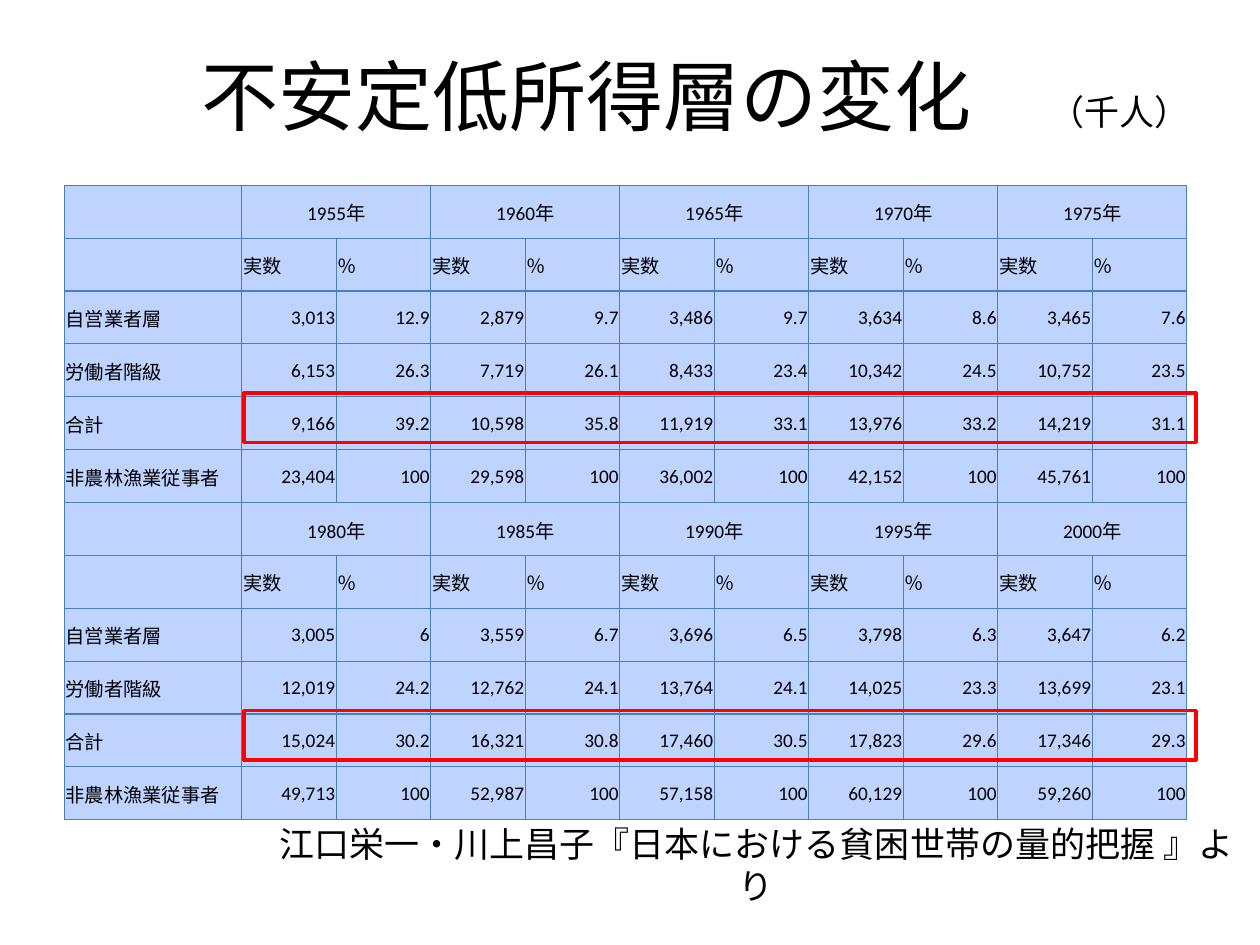
from dataclasses import dataclass

from lxml import etree
from pptx import Presentation
from pptx import util as u
from pptx.dml.color import RGBColor
from pptx.enum import shapes, text
from pptx.oxml import ns


@dataclass(frozen=True)
class Theme:
    """Colours, type and line sizes of the slide."""
    font: str = "Calibri"
    ink: str = "000000"
    cell: str = "BFD3FF"
    rule: str = "4B7EBC"
    mark: str = "FF0000"
    head: float = 44
    note: float = 20
    body: float = 11
    thin: float = 0.75
    bold: float = 2


THEME = Theme()
ALIGN = text.PP_ALIGN
LABELS = ["自営業者層", "労働者階級", "合計", "非農林漁業従事者"]
BLOCKS = [
    ([1955, 1960, 1965, 1970, 1975], [
        "3,013 12.9 2,879 9.7 3,486 9.7 3,634 8.6 3,465 7.6",
        "6,153 26.3 7,719 26.1 8,433 23.4 10,342 24.5 10,752 23.5",
        "9,166 39.2 10,598 35.8 11,919 33.1 13,976 33.2 14,219 31.1",
        "23,404 100 29,598 100 36,002 100 42,152 100 45,761 100"]),
    ([1980, 1985, 1990, 1995, 2000], [
        "3,005 6 3,559 6.7 3,696 6.5 3,798 6.3 3,647 6.2",
        "12,019 24.2 12,762 24.1 13,764 24.1 14,025 23.3 13,699 23.1",
        "15,024 30.2 16,321 30.8 17,460 30.5 17,823 29.6 17,346 29.3",
        "49,713 100 52,987 100 57,158 100 60,129 100 59,260 100"]),
]
STEP = len(LABELS) + 2
ROWS = STEP * len(BLOCKS)
COLS = 11
LEAD = 1.88


def share(deck, left, top, width, height):
    """Turn percentages of the slide into a box of lengths."""
    wide, high = deck.slide_width / 100, deck.slide_height / 100
    return [round(n) for n in (left * wide, top * high, width * wide, height * high)]


def style(para, size, align=ALIGN.LEFT):
    """Set the type and alignment of a paragraph."""
    para.alignment = align
    para.font.size = u.Pt(size)
    para.font.name = THEME.font
    para.font.color.rgb = RGBColor.from_string(THEME.ink)


def title(slide, box):
    """Fill the title placeholder, with the unit in smaller type."""
    head = slide.shapes.title
    head.left, head.top, head.width, head.height = box
    head.text_frame.vertical_anchor = text.MSO_ANCHOR.MIDDLE
    para = head.text_frame.paragraphs[0]
    style(para, THEME.head, ALIGN.CENTER)
    para.add_run().text = "不安定低所得層の変化　"
    unit = para.add_run()
    unit.text = "（千人）"
    unit.font.size = u.Pt(THEME.note)


def border(cell):
    """Draw a thin rule on each side of a cell."""
    props = cell._tc.get_or_add_tcPr()
    for spot, side in enumerate(("lnL", "lnR", "lnT", "lnB")):
        line = etree.Element(ns.qn(f"a:{side}"), w=str(u.Pt(THEME.thin)))
        fill = etree.SubElement(line, ns.qn("a:solidFill"))
        etree.SubElement(fill, ns.qn("a:srgbClr"), val=THEME.rule)
        props.insert(spot, line)


def write(cell, words, align):
    """Write a line of text in a cell."""
    cell.text = words
    style(cell.text_frame.paragraphs[0], THEME.body, align)


def block(grid, top, years, lines):
    """Fill one band of five years, starting at a given row."""
    for pos, year in enumerate(years):
        col = 1 + 2 * pos
        grid.cell(top, col).merge(grid.cell(top, col + 1))
        write(grid.cell(top, col), f"{year}年", ALIGN.CENTER)
        write(grid.cell(top + 1, col), "実数", ALIGN.LEFT)
        write(grid.cell(top + 1, col + 1), "％", ALIGN.LEFT)
    for row, (label, line) in enumerate(zip(LABELS, lines), top + 2):
        write(grid.cell(row, 0), label, ALIGN.LEFT)
        for col, value in enumerate(line.split(), 1):
            write(grid.cell(row, col), value, ALIGN.RIGHT)


def table(slide, box):
    """Build the table of both bands of years."""
    grid = slide.shapes.add_table(ROWS, COLS, *box).table
    unit = box[2] / (LEAD + COLS - 1)
    for pos, col in enumerate(grid.columns):
        col.width = round(unit if pos else unit * LEAD)
    for row in grid.rows:
        row.height = round(box[3] / ROWS)
    for cell in grid.iter_cells():
        cell.margin_left = cell.margin_right = cell.margin_top = u.Inches(0.01)
        cell.margin_bottom = 0
        cell.vertical_anchor = text.MSO_ANCHOR.MIDDLE
        cell.fill.solid()
        cell.fill.fore_color.rgb = RGBColor.from_string(THEME.cell)
        style(cell.text_frame.paragraphs[0], THEME.body)
        border(cell)
    for pos, (years, lines) in enumerate(BLOCKS):
        block(grid, pos * STEP, years, lines)


def source(slide, box):
    """Credit the source below the table."""
    frame = slide.shapes.add_textbox(*box).text_frame
    frame.word_wrap = True
    frame.vertical_anchor = text.MSO_ANCHOR.MIDDLE
    para = frame.paragraphs[0]
    para.text = "江口栄一・川上昌子『日本における貧困世帯の量的把握 』より"
    style(para, THEME.note, ALIGN.CENTER)


def marks(slide, box):
    """Frame the row of totals in each band of the table."""
    left, top, wide, high = box
    unit, row = wide / (LEAD + COLS - 1), high / ROWS
    for pos in range(len(BLOCKS)):
        line = pos * STEP + 2 + LABELS.index("合計")
        spot = (left + unit * (LEAD + 0.02), top + row * (line - 0.07),
                unit * 10.08, row * 0.93)
        mark = slide.shapes.add_shape(shapes.MSO_SHAPE.RECTANGLE, *map(round, spot))
        mark.shadow.inherit = False
        mark.fill.background()
        mark.line.color.rgb = RGBColor.from_string(THEME.mark)
        mark.line.width = u.Pt(THEME.bold)


def main():
    """Build the slide and save it."""
    deck = Presentation()
    deck.slide_width, deck.slide_height = u.Inches(10), u.Inches(7.5)
    slide = deck.slides.add_slide(deck.slide_layouts[5])
    area = share(deck, 5.1, 19.6, 89.1, 67.2)
    title(slide, share(deck, 10.2, 1.73, 90, 16.67))
    table(slide, area)
    source(slide, share(deck, 20.9, 85.73, 78.2, 11.47))
    marks(slide, area)
    deck.save("out.pptx")


if __name__ == "__main__":
    main()
